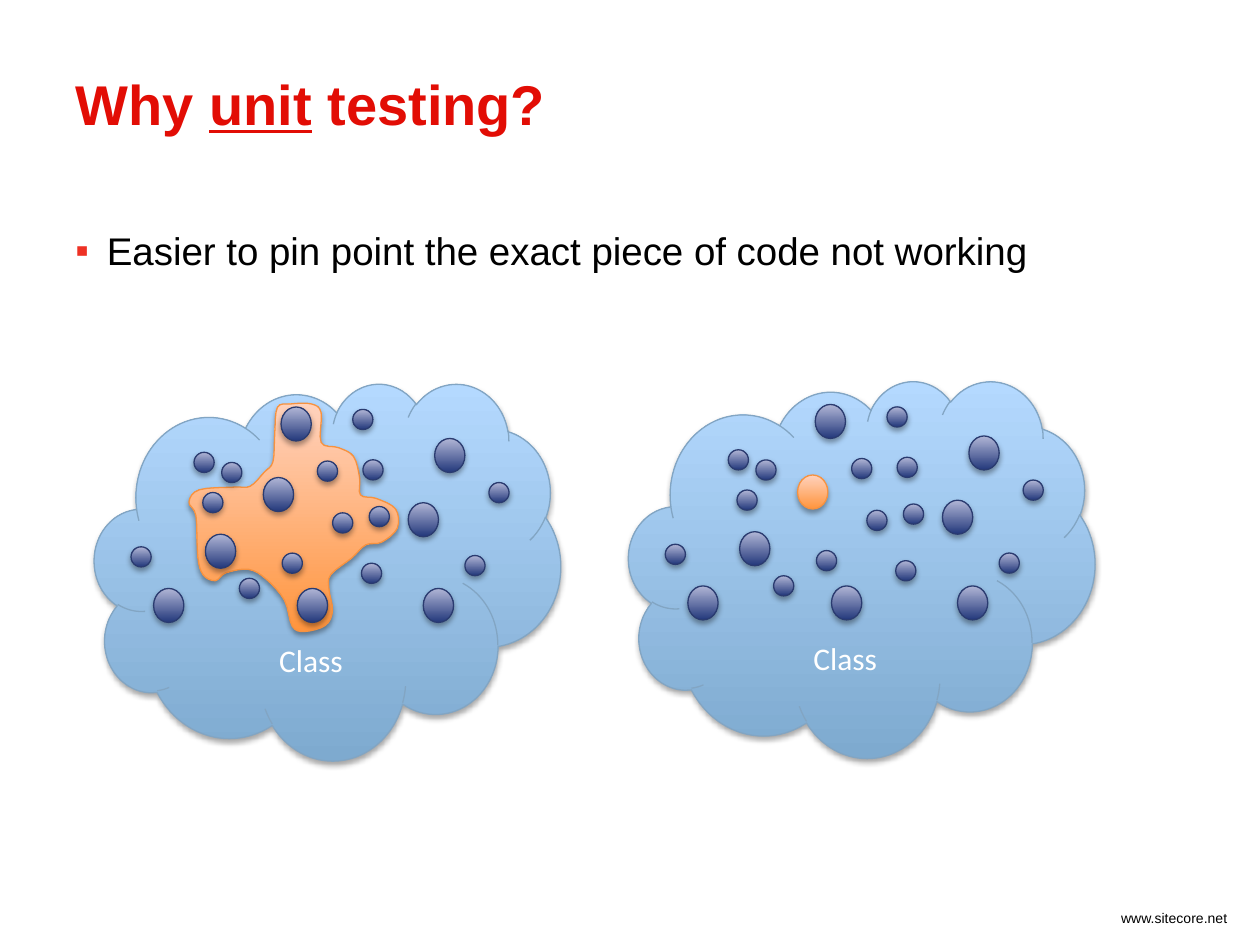
from dataclasses import dataclass
from itertools import chain

from lxml.etree import SubElement
from pptx import Presentation
from pptx.dml.color import RGBColor
from pptx.enum.shapes import MSO_SHAPE as Preset
from pptx.enum.text import MSO_ANCHOR as Anchor, PP_ALIGN as Align
from pptx.oxml.ns import qn
from pptx.util import Pt


@dataclass(frozen=True)
class Theme:
    title: str = "E20D05"
    bullet: str = "EE3124"
    text: str = "000000"
    light: str = "FFFFFF"
    shadow: str = "000000"
    cloud: tuple = ("7EAACF", "B4D9FF", "82A5C3")
    member: tuple = ("23387B", "B1B6D6", "2A3B70")
    highlight: tuple = ("FF953E", "FFD2BD", "F69240")
    title_size: float = 32
    body_size: float = 22
    label_size: float = 18
    footer_size: float = 8
    font: str = "Arial"
    label_font: str = "Calibri"


THEME = Theme()
CLOUD_SIZE = (266.4, 215.28)
BROAD_CLOUD = (54, 218.88)
EXACT_CLOUD = (359.28, 217.44)
SMALL_SIZE = (11.52, 11.52)
LARGE_SIZE = (17.28, 19.44)
CURVE_STEPS = 4

SUSPECT = (96.5, 54)
SMALL_MEMBERS = [
    (56.9, 39.6), (61.9, 62.6), (72.7, 45.4), (136.1, 74.2), (153.4, 43.9),
    (107.3, 97.2), (82.8, 111.6), (20.9, 93.6), (147.6, 15.1), (152.6, 103),
    (225.4, 56.9), (211.7, 98.6), (157, 70.6), (127.4, 44.6),
]
LARGE_MEMBERS = [
    (179.3, 68.4), (187.9, 117.4), (194.4, 31.7), (33.8, 117.4),
    (63.4, 86.4), (106.6, 13.7), (115.9, 117.4),
]
SUSPECT_REGION = {
    "left shoulder": [(54, 68), (60, 61), (80, 59.5), (89, 59), (97, 51)],
    "top arm": [(102, 45), (103, 29), (104.5, 14), (112, 12), (124, 12),
                (129.5, 17), (129.5, 34)],
    "right shoulder": [(139.5, 37), (148, 42), (151.5, 54), (152, 64)],
    "right arm": [(161, 66), (172, 72), (173, 83), (164, 91), (155, 92.5)],
    "right hip": [(147, 100), (135, 109.5)],
    "bottom arm": [(134, 118), (136, 130), (132, 138.5), (120, 142),
                   (113, 139), (108.5, 124)],
    "left arm": [(98, 112), (88, 106.5), (75, 108.5), (69, 113),
                 (62, 109.5), (59, 99), (58, 76)],
}


def write(paragraph, text, *, size, color=THEME.text, font=THEME.font,
          bold=False, underline=False, align=Align.LEFT):
    paragraph.alignment = align
    run = paragraph.add_run()
    run.text = text
    run.font.size = Pt(size)
    run.font.name = font
    run.font.bold = bold
    run.font.underline = underline
    run.font.color.rgb = RGBColor.from_string(color)


def add_text_box(slide, left, top, width, height):
    box = slide.shapes.add_textbox(Pt(left), Pt(top), Pt(width), Pt(height))
    box.text_frame.word_wrap = True
    return box.text_frame.paragraphs[0]


def add_bullet(paragraph, character, color, indent):
    properties = paragraph._p.get_or_add_pPr()
    properties.set("marL", str(Pt(indent)))
    properties.set("indent", str(Pt(-indent)))
    bullet_color = SubElement(properties, qn("a:buClr"))
    SubElement(bullet_color, qn("a:srgbClr"), val=color)
    SubElement(properties, qn("a:buFont"), typeface=THEME.font)
    SubElement(properties, qn("a:buChar"), char=character)


def add_shadow(shape):
    shape.shadow.inherit = False
    effects = shape._element.spPr.find(qn("a:effectLst"))
    shadow = SubElement(effects, qn("a:outerShdw"), blurRad=str(Pt(3.1)),
                        dist=str(Pt(1.8)), dir="5400000", rotWithShape="0")
    color = SubElement(shadow, qn("a:srgbClr"), val=THEME.shadow)
    SubElement(color, qn("a:alpha"), val="35000")


def style(shape, colors):
    *stop_colors, line_color = colors
    shape.fill.gradient()
    shape.fill.gradient_angle = 90
    for stop, color in zip(shape.fill.gradient_stops, stop_colors):
        stop.color.rgb = RGBColor.from_string(color)
    shape.line.color.rgb = RGBColor.from_string(line_color)
    shape.line.width = Pt(0.75)
    add_shadow(shape)


def offset(origin, point):
    return origin[0] + point[0], origin[1] + point[1]


def add_preset(slide, preset, position, size, colors):
    shape = slide.shapes.add_shape(preset, *map(Pt, position + size))
    style(shape, colors)
    return shape


def add_class_cloud(slide, origin):
    cloud = add_preset(slide, Preset.CLOUD, origin, CLOUD_SIZE, THEME.cloud)
    cloud.text_frame.vertical_anchor = Anchor.BOTTOM
    write(cloud.text_frame.paragraphs[0], "Class", size=THEME.label_size,
          color=THEME.light, font=THEME.label_font, align=Align.CENTER)


def spline(before, start, end, after, t):
    return (start + (end - before) * t / 2
            + (2 * before - 5 * start + 4 * end - after) * t ** 2 / 2
            + (3 * (start - end) + after - before) * t ** 3 / 2)


def smooth_outline(corners):
    count = len(corners)
    outline = []
    for index in range(count):
        neighbours = [corners[(index + shift) % count] for shift in (-1, 0, 1, 2)]
        for step in range(CURVE_STEPS):
            outline.append(tuple(spline(*axis, step / CURVE_STEPS)
                                 for axis in zip(*neighbours)))
    return outline


def add_region(slide, origin, parts, colors):
    corners = list(chain.from_iterable(parts.values()))
    start, *others = [tuple(map(Pt, offset(origin, point)))
                      for point in smooth_outline(corners)]
    builder = slide.shapes.build_freeform(*start)
    builder.add_line_segments(others, close=True)
    style(builder.convert_to_shape(), colors)


def add_members(slide, origin, suspect_colors):
    groups = [
        (SMALL_MEMBERS, SMALL_SIZE, THEME.member),
        (LARGE_MEMBERS, LARGE_SIZE, THEME.member),
        ([SUSPECT], LARGE_SIZE, suspect_colors),
    ]
    for members, size, colors in groups:
        for member in members:
            add_preset(slide, Preset.OVAL, offset(origin, member), size, colors)


def main():
    presentation = Presentation()
    presentation.slide_width, presentation.slide_height = Pt(720), Pt(540)
    slide = presentation.slides.add_slide(presentation.slide_layouts[6])

    footer = add_text_box(slide, 324, 516.24, 384.48, 26.64)
    write(footer, "www.sitecore.net", size=THEME.footer_size, align=Align.RIGHT)

    title = add_text_box(slide, 36, 36, 648, 78.48)
    for text, underline in [("Why ", False), ("unit", True), (" testing?", False)]:
        write(title, text, size=THEME.title_size, color=THEME.title,
              bold=True, underline=underline)

    body = add_text_box(slide, 36, 126, 648, 53.28)
    add_bullet(body, "▪", THEME.bullet, 18)
    write(body, "Easier to pin point the exact piece of code not working",
          size=THEME.body_size)

    add_class_cloud(slide, BROAD_CLOUD)
    add_region(slide, BROAD_CLOUD, SUSPECT_REGION, THEME.highlight)
    add_members(slide, BROAD_CLOUD, THEME.member)
    add_class_cloud(slide, EXACT_CLOUD)
    add_members(slide, EXACT_CLOUD, THEME.highlight)

    presentation.save("out.pptx")


if __name__ == "__main__":
    main()
